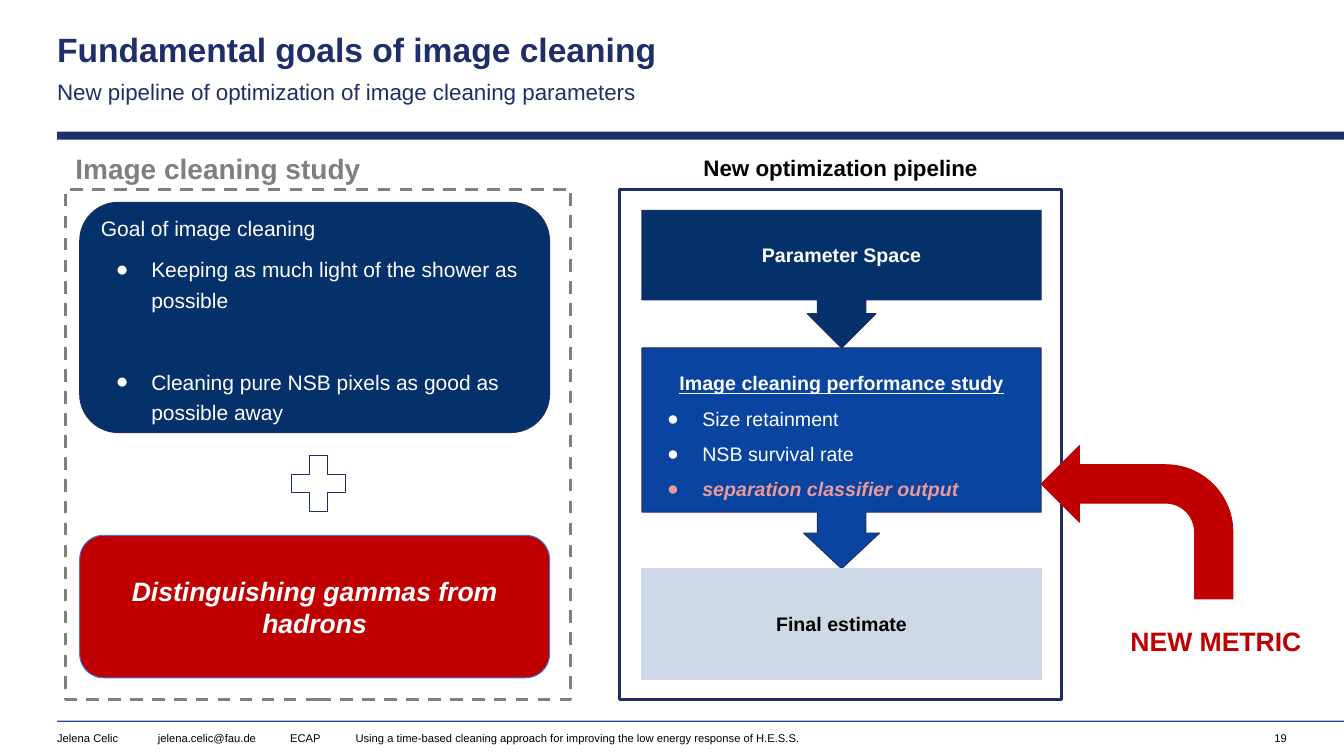
from lxml.etree import SubElement
from pptx import Presentation
from pptx.dml.color import RGBColor as RGB
from pptx.enum.dml import MSO_LINE
from pptx.enum.shapes import MSO_SHAPE as Shape
from pptx.enum.text import MSO_ANCHOR as Anchor, MSO_AUTO_SIZE as Fit, PP_ALIGN as Align
from pptx.oxml.ns import qn
from pptx.util import Cm, Pt

INK = dict(navy="1E2E68", rule="2E439B", deep="04316A", blue="0944A1",
           pale="CED9E7", red="C00000", edge="3C78D8", pink="EA9999",
           gray="7F7F7F", white="FFFFFF", black="000000")

TITLE = "Fundamental goals of image cleaning"
SUB = "New pipeline of optimization of image cleaning parameters"
HEADS = ("Image cleaning study", "New optimization pipeline")
FOOT = ("Jelena Celic", "jelena.celic@fau.de", "ECAP",
        "Using a time-based cleaning approach for improving the low energy "
        "response of H.E.S.S.")
TABS = (2.54, 5.87, 7.52)
PAGE = "19"

# Each paragraph is its text and its style
LEAD = dict(size=15, ink="white", space=1.2)
ITEM = dict(LEAD, bullet=True, before=8)
GOALS = [("Goal of image cleaning", LEAD),
         ("Keeping as much light of the shower as possible", ITEM),
         ("Cleaning pure NSB pixels as good as possible away", dict(ITEM, before=37))]
CLAIM = [("Distinguishing gammas from hadrons",
          dict(size=19, ink="white", bold=True, italic=True, align=Align.CENTER))]
STEP = dict(size=14, ink="white", bold=True, align=Align.CENTER)
POINT = dict(size=14, ink="white", space=1.5, bullet=True)
STUDY = [("Image cleaning performance study", dict(STEP, under=True, space=1.5)),
         ("Size retainment", POINT),
         ("NSB survival rate", POINT),
         ("separation classifier output", dict(POINT, ink="pink", bold=True, italic=True))]

# Pipeline steps: shape, height, adjustments, fill, line, paragraphs
CALL = Shape.DOWN_ARROW_CALLOUT
STEPS = [(CALL, 3.47, (0.353, 0.25, 0.25, 0.65), "deep", "navy", [("Parameter Space", STEP)]),
         (CALL, 5.56, (0.22, 0.172, 0.161, 0.744), "blue", "navy", STUDY),
         (Shape.RECTANGLE, 2.79, (), "pale", "pale",
          [("Final estimate", dict(STEP, ink="black"))])]

LEFT, WIDE, HIGH = 1.44, 33.87, 19.05
TOP, TALL = 4.77, 12.86
FRAMES = ((15.62, 11.13, "navy", None), (1.65, 12.74, "gray", MSO_LINE.DASH))

deck = Presentation()
deck.slide_width, deck.slide_height = Cm(WIDE), Cm(HIGH)
slide = deck.slides.add_slide(deck.slide_layouts[5])


def tint(name):
    return RGB.from_string(INK[name])


def style(par, size, ink, bold=False, italic=False, under=False, align=Align.LEFT,
          space=1.0, before=0, bullet=False, indent=0, tabs=()):
    par.alignment, par.line_spacing = align, space
    par.space_before = Pt(before)
    props = par._p.get_or_add_pPr()
    if bullet:
        props.set("marL", str(Cm(1.27)))
        props.set("indent", str(-Cm(0.89)))
        SubElement(SubElement(props, qn("a:buClr")), qn("a:srgbClr"), val=INK[ink])
        SubElement(props, qn("a:buFont"), typeface="Arial")
        SubElement(props, qn("a:buChar"), char="●")
    elif indent:
        props.set("marL", str(Cm(indent)))
    if tabs:
        stops = SubElement(props, qn("a:tabLst"))
        for pos in tabs:
            SubElement(stops, qn("a:tab"), pos=str(Cm(pos)), algn="l")
    for run in par.runs:
        font = run.font
        font.name, font.size = "Arial", Pt(size)
        font.bold, font.italic, font.underline = bold, italic, under
        font.color.rgb = tint(ink)


def write(shape, lines, pad=0.25, anchor=Anchor.TOP, right=None):
    frame = shape.text_frame
    frame.word_wrap, frame.auto_size = True, Fit.NONE
    frame.vertical_anchor = anchor
    frame.margin_left = frame.margin_top = frame.margin_bottom = Cm(pad)
    frame.margin_right = Cm(pad if right is None else right)
    frame.text = "\n".join(text for text, _ in lines)
    for par, (_, look) in zip(frame.paragraphs, lines):
        style(par, **look)


def label(x, y, w, h, text, pad=0.25, right=None, **look):
    box = slide.shapes.add_textbox(Cm(x), Cm(y), Cm(w), Cm(h))
    write(box, [(text, look)], pad, right=right)


def draw(kind, x, y, w, h, fill, line=None, width=0.75, adj=(), lines=()):
    shape = slide.shapes.add_shape(kind, Cm(x), Cm(y), Cm(w), Cm(h))
    shape.shadow.inherit = False
    shape.fill.solid()
    shape.fill.fore_color.rgb = tint(fill)
    if line:
        shape.line.color.rgb = tint(line)
        shape.line.width = Pt(width)
    else:
        shape.line.fill.background()
    for i, val in enumerate(adj):
        shape.adjustments[i] = val
    if lines:
        write(shape, lines, anchor=Anchor.MIDDLE)
    return shape


# Header and footer
title = slide.shapes.title
title.left, title.top, title.width, title.height = Cm(LEFT), Cm(0.84), Cm(23.42), Cm(0.91)
write(title, [(TITLE, dict(size=24, ink="navy", bold=True, space=0.9))], pad=0)
label(LEFT, 1.9, 19.02, 0.69, SUB, pad=0, right=1, size=16, ink="navy", space=1.1)
draw(Shape.RECTANGLE, LEFT, 3.32, WIDE - LEFT, 0.2, "navy")
draw(Shape.RECTANGLE, LEFT, 18.16, WIDE - LEFT, 0.03, "rule")
label(LEFT, 18.44, 25.65, 0.33, "\t".join(FOOT), pad=0, size=8, ink="black", tabs=TABS)
label(31.9, 18.44, 0.53, 0.33, PAGE, pad=0, size=8, ink="black", align=Align.RIGHT)

# Frames and their headings
for x, w, ink, dash in FRAMES:
    frame = draw(Shape.RECTANGLE, x, TOP, w, TALL, "white", ink, 2.25)
    if dash:
        frame.line.dash_style = dash
label(1.65, 3.56, 9.04, 1.37, HEADS[0], size=20, ink="gray", bold=True)
label(15.62, 3.63, 11.13, 1.19, HEADS[1], size=16, ink="black", bold=True,
      align=Align.CENTER)

# Study goals
ROUND = Shape.ROUNDED_RECTANGLE
draw(ROUND, 2.01, 5.1, 11.84, 5.8, "deep", "navy", adj=(0.167,), lines=GOALS)
draw(Shape.MATH_PLUS, 7.09, 11.23, 1.88, 1.92, "white", "navy", adj=(0.235,))
draw(ROUND, 2.01, 13.49, 11.84, 3.59, "red", "edge", adj=(0.167,), lines=CLAIM)

# Pipeline, each step resting on the next
y = 5.3
for kind, h, adj, fill, line, lines in STEPS:
    draw(kind, 16.18, y, 10.06, h, fill, line, adj=adj, lines=lines)
    y += h

# New metric
arrow = draw(Shape.BENT_ARROW, 26.24, 11.23, 4.83, 3.86, "red", "red",
             adj=(0.25, 0.25, 0.25, 0.438))
arrow._element.spPr.find(qn("a:xfrm")).set("flipH", "1")
label(26.97, 15.49, 6.88, 1.32, "NEW METRIC", size=19, ink="red", bold=True, indent=1.27)

deck.save("out.pptx")
